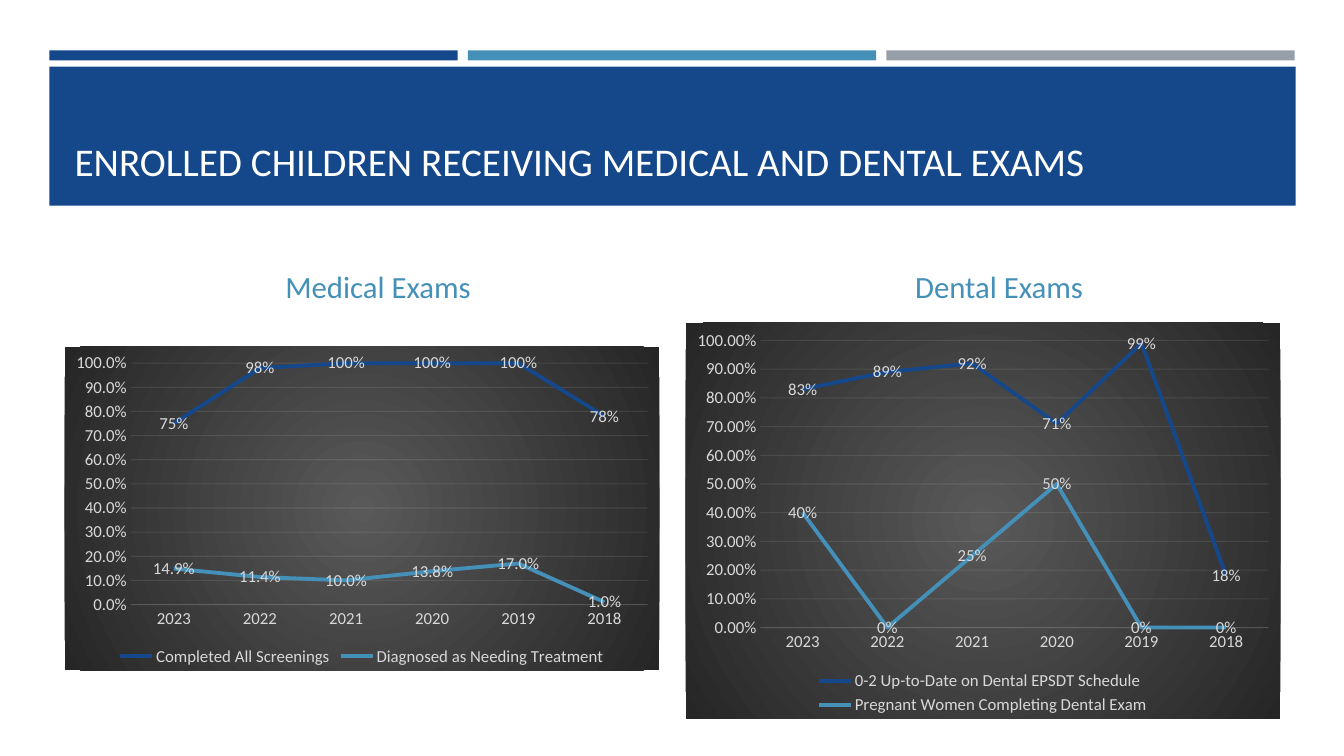
from lxml.etree import SubElement
from pptx import Presentation
from pptx.chart.data import CategoryChartData
from pptx.dml.color import RGBColor
from pptx.enum.chart import XL_CHART_TYPE, XL_LABEL_POSITION, XL_LEGEND_POSITION, XL_TICK_MARK
from pptx.enum.shapes import MSO_SHAPE
from pptx.enum.text import MSO_ANCHOR, MSO_AUTO_SIZE, PP_ALIGN
from pptx.oxml import parse_xml
from pptx.oxml.ns import nsdecls, qn
from pptx.util import Inches, Pt

NAVY = RGBColor(0x15, 0x48, 0x8A)
BLUE = RGBColor(0x45, 0x90, 0xB8)
GRAY = RGBColor(0x96, 0x9F, 0xA7)
WHITE = RGBColor(0xFF, 0xFF, 0xFF)
LABEL = RGBColor(0xD9, 0xD9, 0xD9)
GRID = RGBColor(0xF2, 0xF2, 0xF2)
FONT = "Calibri"

TITLE = "ENROLLED CHILDREN RECEIVING MEDICAL AND DENTAL EXAMS"
YEARS = ["2023", "2022", "2021", "2020", "2019", "2018"]
PANELS = [
    {
        "heading": "Medical Exams",
        "heading_box": (0.97, 2.48, 5.56, 0.59),
        "chart_box": (0.64, 3.44, 5.9, 3.21),
        "axis_format": "0.0%",
        "series": [
            ("Completed All Screenings", (0.75, 0.98, 1, 1, 1, 0.78), "0%"),
            ("Diagnosed as Needing Treatment", (0.149, 0.114, 0.1, 0.138, 0.17, 0.01), "0.0%"),
        ],
    },
    {
        "heading": "Dental Exams",
        "heading_box": (7.13, 2.46, 5.56, 0.61),
        "chart_box": (6.8, 3.2, 5.9, 3.93),
        "axis_format": "0.00%",
        "series": [
            ("0-2 Up-to-Date on Dental EPSDT Schedule", (0.83, 0.89, 0.92, 0.71, 0.99, 0.18), "0%"),
            ("Pregnant Women Completing Dental Exam", (0.4, 0, 0.25, 0.5, 0, 0), "0%"),
        ],
    },
]
BAR_LEFT, BAR_PITCH = 0.49, 4.15
DARK_GRADIENT = (
    f'<c:spPr {nsdecls("c", "a")}><a:gradFill><a:gsLst>'
    '<a:gs pos="0"><a:srgbClr val="595959"/></a:gs>'
    '<a:gs pos="100000"><a:srgbClr val="262626"/></a:gs></a:gsLst>'
    '<a:path path="circle"><a:fillToRect l="50000" t="50000" r="50000" b="50000"/></a:path>'
    "</a:gradFill><a:ln><a:noFill/></a:ln></c:spPr>"
)


def style_font(font, size, color):
    """Set the typeface, size and colour of a font."""
    font.name, font.size, font.color.rgb = FONT, Pt(size), color


def write_text(box, text, size, color, align=PP_ALIGN.LEFT, before=0, after=0):
    """Write one bottom-anchored paragraph into a box."""
    frame = box.text_frame
    frame.word_wrap = True
    frame.auto_size = MSO_AUTO_SIZE.NONE
    frame.vertical_anchor = MSO_ANCHOR.BOTTOM
    para = frame.paragraphs[0]
    para.alignment = align
    para.space_before, para.space_after = Pt(before), Pt(after)
    span = para.add_run()
    span.text = text
    style_font(span.font, size, color)


def add_bar(page, bounds, color):
    """Add a plain filled rectangle."""
    bar = page.shapes.add_shape(MSO_SHAPE.RECTANGLE, *map(Inches, bounds))
    bar.shadow.inherit = False
    bar.fill.solid()
    bar.fill.fore_color.rgb = color
    bar.line.fill.background()


def style_line(line, color, width):
    """Set the colour and width of a chart line."""
    line.color.rgb, line.width = color, Pt(width)


def add_line_chart(page, panel):
    """Add a dark line chart of yearly percentages."""
    data = CategoryChartData()
    data.categories = YEARS
    for name, values, _ in panel["series"]:
        data.add_series(name, values)
    frame = page.shapes.add_chart(XL_CHART_TYPE.LINE, *map(Inches, panel["chart_box"]), data)
    chart = frame.chart
    chart.has_title = False
    style_font(chart.font, 12, LABEL)
    chart.has_legend = True
    chart.legend.position = XL_LEGEND_POSITION.BOTTOM
    chart.legend.include_in_layout = False
    style_font(chart.legend.font, 12, LABEL)

    for axis in (chart.category_axis, chart.value_axis):
        axis.major_tick_mark = axis.minor_tick_mark = XL_TICK_MARK.NONE
        style_font(axis.tick_labels.font, 12, LABEL)
    style_line(chart.category_axis.format.line, GRID, 0.75)
    value_axis = chart.value_axis
    value_axis.minimum_scale, value_axis.maximum_scale, value_axis.major_unit = 0, 1, 0.1
    value_axis.format.line.fill.background()
    value_axis.tick_labels.number_format = panel["axis_format"]
    value_axis.tick_labels.number_format_is_linked = False
    style_line(value_axis.major_gridlines.format.line, GRID, 0.75)

    plot = chart.plots[0]
    plot.vary_by_categories = False
    for series, color, (_, _, label_format) in zip(plot.series, (NAVY, BLUE), panel["series"]):
        series.smooth = False
        style_line(series.format.line, color, 2.75)
        labels = series.data_labels
        labels.show_value = True
        labels.position = XL_LABEL_POSITION.CENTER
        labels.number_format = label_format
        labels.number_format_is_linked = False
        style_font(labels.font, 12, LABEL)

    for tint in chart.element.iter(qn("a:srgbClr")):
        if tint.get("val") == str(GRID):
            SubElement(tint, qn("a:alpha"), val="10000")
    chart.element.find(qn("c:chart")).addnext(parse_xml(DARK_GRADIENT))


def main():
    """Build and save the exam slide."""
    deck = Presentation()
    deck.slide_width, deck.slide_height = Inches(13.33), Inches(7.5)
    page = deck.slides.add_slide(deck.slide_layouts[5])

    for index, color in enumerate((NAVY, BLUE, GRAY)):
        add_bar(page, (BAR_LEFT + index * BAR_PITCH, 0.5, 4.05, 0.1), color)
    add_bar(page, (BAR_LEFT, 0.66, 12.36, 1.38), NAVY)

    title = page.shapes.title
    title.left, title.top, title.width, title.height = map(Inches, (0.64, 0.8, 12.06, 1.08))
    write_text(title, TITLE, 28, WHITE)
    title.element.getparent().append(title.element)

    for panel in PANELS:
        heading = page.shapes.add_textbox(*map(Inches, panel["heading_box"]))
        write_text(heading, panel["heading"], 22, BLUE, align=PP_ALIGN.CENTER, before=4.4, after=6)
        add_line_chart(page, panel)

    deck.save("out.pptx")


if __name__ == "__main__":
    main()
